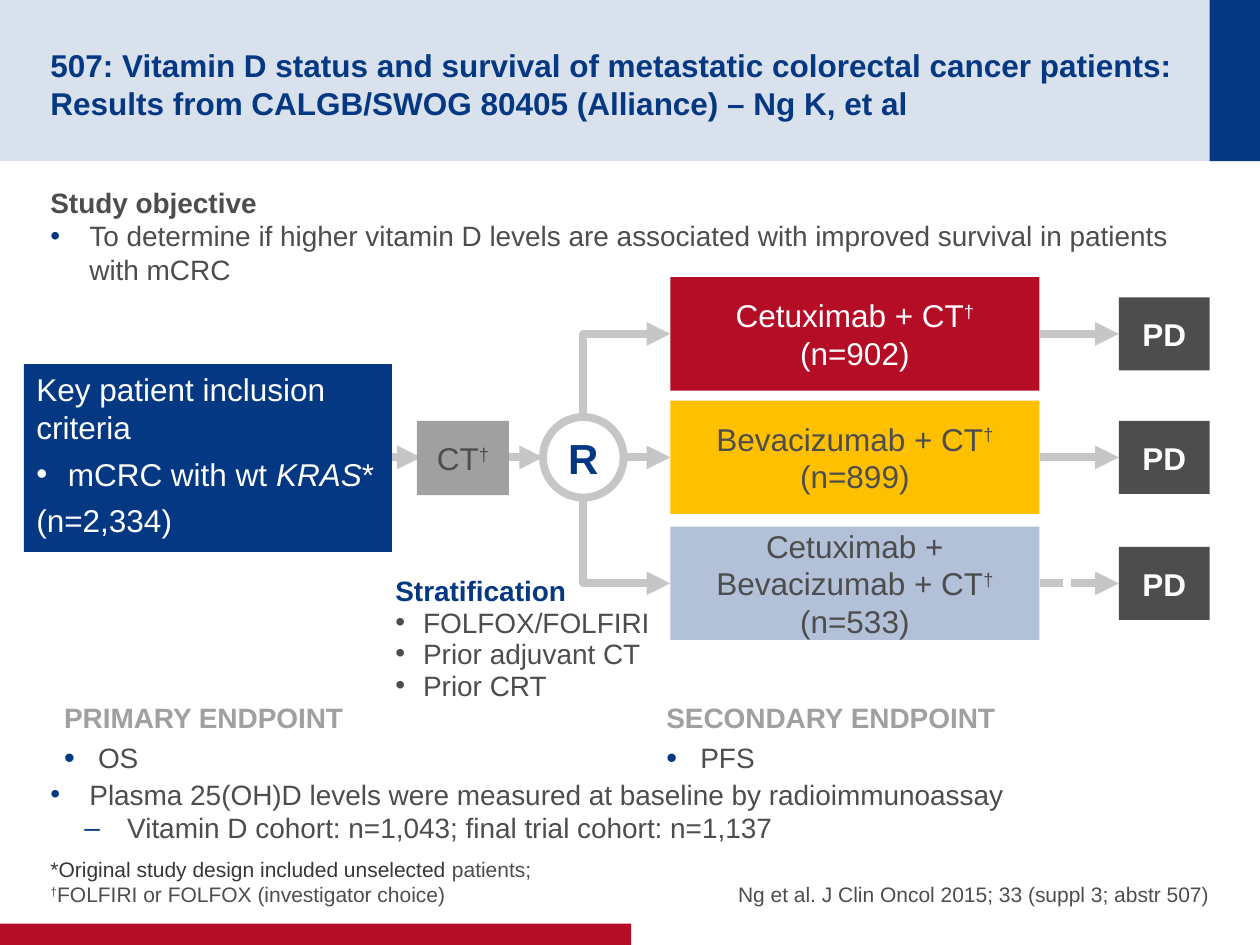
from dataclasses import dataclass, field
from typing import NamedTuple

from lxml import etree
from pptx import Presentation
from pptx.dml.color import RGBColor
from pptx.enum.dml import MSO_LINE
from pptx.enum.shapes import MSO_CONNECTOR, MSO_SHAPE
from pptx.enum.text import MSO_ANCHOR, PP_ALIGN
from pptx.oxml.ns import qn
from pptx.util import Inches, Pt

RECT, OVAL = MSO_SHAPE.RECTANGLE, MSO_SHAPE.OVAL
STRAIGHT, ELBOW = MSO_CONNECTOR.STRAIGHT, MSO_CONNECTOR.ELBOW
TOP, MIDDLE, BOTTOM = MSO_ANCHOR.TOP, MSO_ANCHOR.MIDDLE, MSO_ANCHOR.BOTTOM
LEFT, CENTER, RIGHT = PP_ALIGN.LEFT, PP_ALIGN.CENTER, PP_ALIGN.RIGHT
DOTTED = MSO_LINE.SQUARE_DOT

COLORS = {
    "navy": "043882", "pale": "D9E1EC", "red": "B60D27", "amber": "FFC000",
    "sky": "B2C0D8", "text": "4D4D4D", "ink": "363636", "gray": "A0A0A0",
    "line": "C6C6C6", "white": "FFFFFF",
}
COLS, ROWS = 100, 75
FONT = "Arial"
PAD = (0.1, 0.05, 0.1, 0.05)
FLAT = (0.1, 0, 0.1, 0)
NONE = (0, 0, 0, 0)


class Box(NamedTuple):
    col: float
    row: float
    cols: float
    rows: float


class Run(NamedTuple):
    text: str
    fmt: dict = {}


@dataclass
class Para:
    runs: list[Run]
    size: float = 16
    color: str = "text"
    bold: bool = False
    align: PP_ALIGN = LEFT
    bullet: str = ""
    bullet_color: str = ""
    bullet_size: int = 100
    left: float = 0
    hang: float = 0
    spacing: dict = field(default_factory=dict)


class Arm(NamedTuple):
    row: float
    drug: str
    count: str
    fill: str
    color: str
    dash: MSO_LINE | None = None


def rgb(name: str) -> RGBColor:
    return RGBColor.from_string(COLORS[name])


def x(col: float) -> int:
    return round(prs.slide_width * col / COLS)


def y(row: float) -> int:
    return round(prs.slide_height * row / ROWS)


def place(box: Box) -> tuple[int, int, int, int]:
    return x(box.col), y(box.row), x(box.cols), y(box.rows)


def set_bullet(p, para: Para) -> None:
    pPr = p._p.get_or_add_pPr()
    pPr.set("marL", str(Inches(para.left)))
    pPr.set("indent", str(Inches(-para.hang)))
    if not para.bullet:
        return
    if para.bullet_color:
        clr = etree.SubElement(pPr, qn("a:buClr"))
        etree.SubElement(clr, qn("a:srgbClr"), val=COLORS[para.bullet_color])
    etree.SubElement(pPr, qn("a:buSzPct"), val=str(para.bullet_size * 1000))
    etree.SubElement(pPr, qn("a:buFont"), typeface=FONT)
    etree.SubElement(pPr, qn("a:buChar"), char=para.bullet)


def write(sp, paras: list[Para], anchor=TOP, pad=PAD, wrap: bool = True) -> None:
    tf = sp.text_frame
    tf.word_wrap, tf.vertical_anchor = wrap, anchor
    for side, inset in zip(("left", "top", "right", "bottom"), pad):
        setattr(tf, f"margin_{side}", Inches(inset))
    for i, para in enumerate(paras):
        p = tf.add_paragraph() if i else tf.paragraphs[0]
        p.alignment = para.align
        for name, points in para.spacing.items():
            setattr(p, name, Pt(points))
        set_bullet(p, para)
        for run in para.runs:
            if run.text == "\n":
                p.add_line_break()
                continue
            r = p.add_run()
            r.text = run.text
            fmt = {"name": FONT, "size": Pt(para.size), "bold": para.bold, **run.fmt}
            color = fmt.pop("color", para.color)
            raised = fmt.pop("raised", False)
            for name, value in fmt.items():
                setattr(r.font, name, value)
            r.font.color.rgb = rgb(color)
            if raised:
                r._r.get_or_add_rPr().set("baseline", "30000")


def add_text(box: Box, paras: list[Para], **frame) -> None:
    write(slide.shapes.add_textbox(*place(box)), paras, **frame)


def add_block(box: Box, fill: str = "", paras: list[Para] | None = None,
              kind=RECT, line: str = "", **frame) -> None:
    sp = slide.shapes.add_shape(kind, *place(box))
    sp.shadow.inherit = False
    if fill:
        sp.fill.solid()
        sp.fill.fore_color.rgb = rgb(fill)
    else:
        sp.fill.background()
    if line:
        sp.line.color.rgb, sp.line.width = rgb(line), Pt(4.5)
    else:
        sp.line.fill.background()
    if paras:
        write(sp, paras, **frame)


def add_arrow(start: tuple, end: tuple, kind=STRAIGHT, dash=None, tip: str = "a:tailEnd") -> None:
    c = slide.shapes.add_connector(kind, x(start[0]), y(start[1]), x(end[0]), y(end[1]))
    c.line.color.rgb, c.line.width = rgb("line"), Pt(4.5)
    if dash:
        c.line.dash_style = dash
    spPr = c._element.spPr
    if kind == ELBOW:
        spPr.find(qn("a:prstGeom")).set("prst", "bentConnector2")
    etree.SubElement(spPr.find(qn("a:ln")), qn(tip), type="triangle")
    etree.SubElement(spPr, qn("a:effectLst"))


def bullet(text: str, left: float = 0.31, hang: float = 0.31, mark: str = "•",
           color: str = "navy", **style) -> Para:
    return Para([Run(text)], bullet=mark, bullet_color=color, left=left, hang=hang, **style)


def label(text: str, color: str, size: float = 18) -> Para:
    return Para([Run(text)], size, color, True, CENTER)


prs = Presentation()
prs.slide_width, prs.slide_height = Inches(10), Inches(7.5)
slide = prs.slides.add_slide(prs.slide_layouts[6])

DAGGER = Run("†", {"raised": True})
MID = 36.3
ARM_LEFT, ARM_WIDTH, ARM_HEIGHT = 53.2, 29.3, 9
PD_LEFT, PD_WIDTH, PD_HEIGHT = 88.8, 7.2, 5.8
HUB, HUB_SIZE = 46.3, 6.4
ARMS = [
    Arm(26.5, "Cetuximab + CT", "(n=902)", "red", "white"),
    Arm(MID, "Bevacizumab + CT", "(n=899)", "amber", "text"),
    Arm(46.3, "Cetuximab + Bevacizumab + CT", "(n=533)", "sky", "text", DOTTED),
]
ENDPOINTS = [(4.1, "PRIMARY ENDPOINT", "OS"), (51.9, "SECONDARY ENDPOINT", "PFS")]
AFTER = {"space_after": 4}
LOOSE = {"space_after": 5}
TIGHT = {"line_spacing": 18}

add_block(Box(0, 0, 100, 12.8), "pale")
add_block(Box(96, 0, 4, 12.8), "navy")
add_block(Box(0, 73.3, 50.1, 1.7), "red")

add_text(Box(4, 2, 90.1, 8.8), [Para([Run(
    "507: Vitamin D status and survival of metastatic colorectal cancer patients: "
    "Results from CALGB/SWOG 80405 (Alliance) – Ng K, et al")], 18, "navy", True)],
    anchor=MIDDLE, pad=(0, 0.05, 0, 0))
add_text(Box(4, 14.2, 91.9, 9), [
    Para([Run("Study objective")], bold=True),
    bullet("To determine if higher vitamin D levels are associated with improved "
           "survival in patients with mCRC")], pad=(0, 0.05, 0.1, 0.05))
add_text(Box(4, 61.2, 91.9, 6.5), [
    bullet("Plasma 25(OH)D levels were measured at baseline by radioimmunoassay"),
    bullet("Vitamin D cohort: n=1,043; final trial cohort: n=1,137", 0.61, 0.34, "–")],
    pad=(0, 0.05, 0.1, 0.05))
add_text(Box(4, 66.7, 45.2, 5.3), [Para([
    Run("*Original study design included unselected ", {"color": "ink"}),
    Run("patients; "), Run("\n"), DAGGER,
    Run("FOLFIRI or FOLFOX (investigator choice)")], 12, spacing=AFTER)],
    anchor=BOTTOM, pad=NONE)
add_text(Box(50.8, 66.7, 45.2, 5.3), [Para([
    Run("Ng et al. J Clin Oncol 2015; 33 (suppl 3; abstr 507)")], 12, align=RIGHT,
    spacing=AFTER)], anchor=BOTTOM, pad=NONE)

add_arrow((30.6, MID), (33.4, MID))
add_arrow((40.3, MID), (HUB - HUB_SIZE / 2, MID))
add_arrow((HUB + HUB_SIZE / 2, MID), (ARM_LEFT, MID))
for arm, side in ((ARMS[0], -1), (ARMS[-1], 1)):
    add_arrow((ARM_LEFT, arm.row), (HUB, MID + side * HUB_SIZE / 2), ELBOW, tip="a:headEnd")
add_block(Box(HUB - HUB_SIZE / 2, MID - HUB_SIZE / 2, HUB_SIZE, HUB_SIZE), "",
          [label("R", "navy", 24)], OVAL, "line", anchor=MIDDLE, wrap=False)

for arm in ARMS:
    add_arrow((ARM_LEFT + ARM_WIDTH, arm.row), (PD_LEFT, arm.row), dash=arm.dash)
    add_block(Box(ARM_LEFT, arm.row - ARM_HEIGHT / 2, ARM_WIDTH, ARM_HEIGHT), arm.fill, [
        Para([Run(arm.drug), DAGGER], 18, arm.color, align=CENTER),
        Para([Run(arm.count)], 18, arm.color, align=CENTER)], anchor=MIDDLE, pad=FLAT)
    add_block(Box(PD_LEFT, arm.row - PD_HEIGHT / 2, PD_WIDTH, PD_HEIGHT), "text",
              [label("PD", "white")], anchor=MIDDLE, pad=FLAT)

add_block(Box(1.9, 28.9, 29.2, 14.9), "navy", [
    Para([Run("Key patient inclusion criteria")], 18, "white", spacing=LOOSE),
    Para([Run("mCRC with wt "), Run("KRAS", {"italic": True}), Run("*")], 18, "white",
         bullet="•", left=0.25, hang=0.25, spacing=LOOSE),
    Para([Run("(n=2,334)")], 18, "white", left=0.32, hang=0.32, spacing=LOOSE)])
add_block(Box(33.1, 33.4, 7.3, 5.9), "gray",
          [Para([Run("CT"), DAGGER], 18, align=CENTER)], anchor=MIDDLE, pad=FLAT)

add_text(Box(30.4, 45.2, 36.3, 9.9), [
    Para([Run("Stratification")], color="navy", bold=True, spacing=TIGHT),
    *(bullet(item, 0.22, 0.22, color="", spacing=TIGHT)
      for item in ("FOLFOX/FOLFIRI", "Prior adjuvant CT", "Prior CRT"))])
for col, title, measure in ENDPOINTS:
    add_text(Box(col, 55.1, 45.2, 13.4), [
        Para([Run(title)], color="gray", bold=True, spacing=AFTER),
        bullet(measure, 0.27, 0.27, bullet_size=110, spacing=AFTER)])

prs.save("out.pptx")
